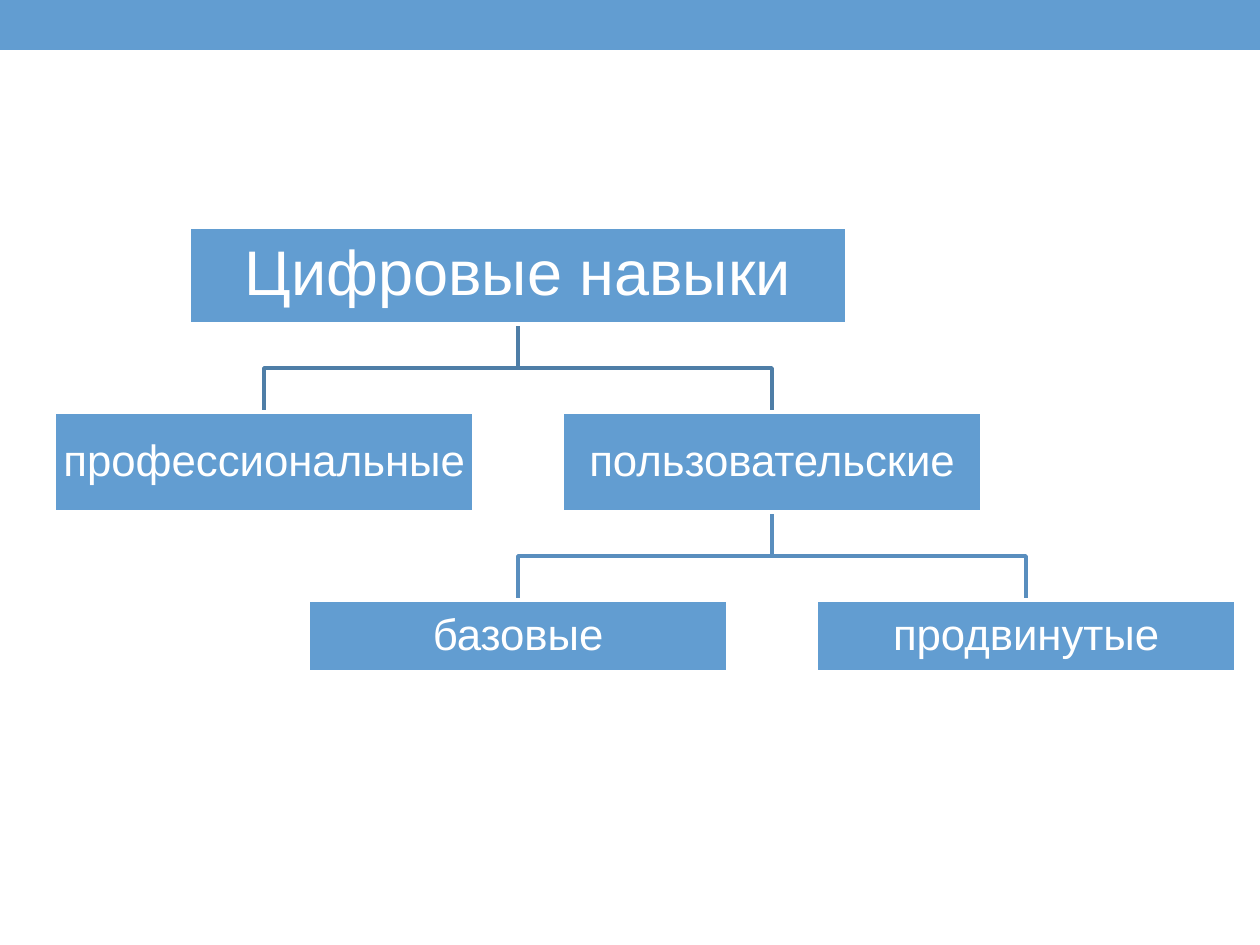
from pptx import Presentation
from pptx.dml.color import RGBColor
from pptx.enum.shapes import MSO_SHAPE
from pptx.enum.text import MSO_ANCHOR, PP_ALIGN
from pptx.util import Pt

RECTANGLE = MSO_SHAPE.RECTANGLE
MIDDLE = MSO_ANCHOR.MIDDLE
CENTER = PP_ALIGN.CENTER

# Content: name -> (label, level, column, parent)
NODES = {
    "skills": ("Цифровые навыки", 0, 1, None),
    "professional": ("профессиональные", 1, 0, "skills"),
    "user": ("пользовательские", 1, 2, "skills"),
    "basic": ("базовые", 2, 1, "user"),
    "advanced": ("продвинутые", 2, 3, "user"),
}

# Levels: top, width, height and inset in px, text size in pt, link colour
LEVELS = [
    dict(top=227, width=658, height=97, inset=4, size=36, link=None),
    dict(top=412, width=420, height=100, inset=3, size=25, link="4E7EA7"),
    dict(top=600, width=420, height=72, inset=3, size=25, link="598EBE"),
]

THEME = dict(font="Arial", accent="629DD1", light="FFFFFF", line=Pt(2.08))

# Geometry in px
SCALE = 914400 / 126
PAGE_WIDTH, PAGE_HEIGHT, BAND_HEIGHT = 1260, 945, 50
FIRST_CENTER, COLUMN_STEP = 264, 254


def emu(px):
    return round(px * SCALE)


def color(name):
    return RGBColor.from_string(name)


def center_of(column):
    return FIRST_CENTER + column * COLUMN_STEP


def add_block(page, left, top, width, height):
    block = page.shapes.add_shape(RECTANGLE, *map(emu, (left, top, width, height)))
    block.shadow.inherit = False
    block.fill.solid()
    block.fill.fore_color.rgb = color(THEME["accent"])
    block.line.fill.background()
    return block


def add_link(page, parent, child):
    _, parent_level, parent_column, _ = parent
    _, child_level, child_column, _ = child
    above, below = LEVELS[parent_level], LEVELS[child_level]
    start_x, end_x = center_of(parent_column), center_of(child_column)
    start_y, end_y = above["top"] + above["height"], below["top"]
    bend_y = (start_y + end_y) / 2
    outline = page.shapes.build_freeform(start_x, start_y, scale=SCALE)
    outline.add_line_segments(
        [(start_x, bend_y), (end_x, bend_y), (end_x, end_y)], close=False)
    link = outline.convert_to_shape()
    link.shadow.inherit = False
    link.fill.background()
    link.line.color.rgb = color(below["link"])
    link.line.width = THEME["line"]


def add_node(page, label, level, column):
    style = LEVELS[level]
    width = style["width"]
    box = add_block(page, center_of(column) - width / 2, style["top"],
                    width, style["height"])
    box.line.color.rgb = color(THEME["light"])
    box.line.width = THEME["line"]
    frame = box.text_frame
    frame.word_wrap = True
    frame.vertical_anchor = MIDDLE
    frame.margin_left = frame.margin_right = emu(style["inset"])
    frame.margin_top = frame.margin_bottom = emu(style["inset"])
    frame.text = label
    para = frame.paragraphs[0]
    para.alignment = CENTER
    para.line_spacing = 0.9
    font = para.runs[0].font
    font.name = THEME["font"]
    font.size = Pt(style["size"])
    font.color.rgb = color(THEME["light"])


def main():
    deck = Presentation()
    deck.slide_width, deck.slide_height = emu(PAGE_WIDTH), emu(PAGE_HEIGHT)
    page = deck.slides.add_slide(deck.slide_layouts[6])

    # Header band
    add_block(page, 0, 0, PAGE_WIDTH, BAND_HEIGHT)

    # Links lie behind the boxes
    for node in NODES.values():
        if node[3]:
            add_link(page, NODES[node[3]], node)
    for label, level, column, _ in NODES.values():
        add_node(page, label, level, column)

    deck.save("out.pptx")


if __name__ == "__main__":
    main()
